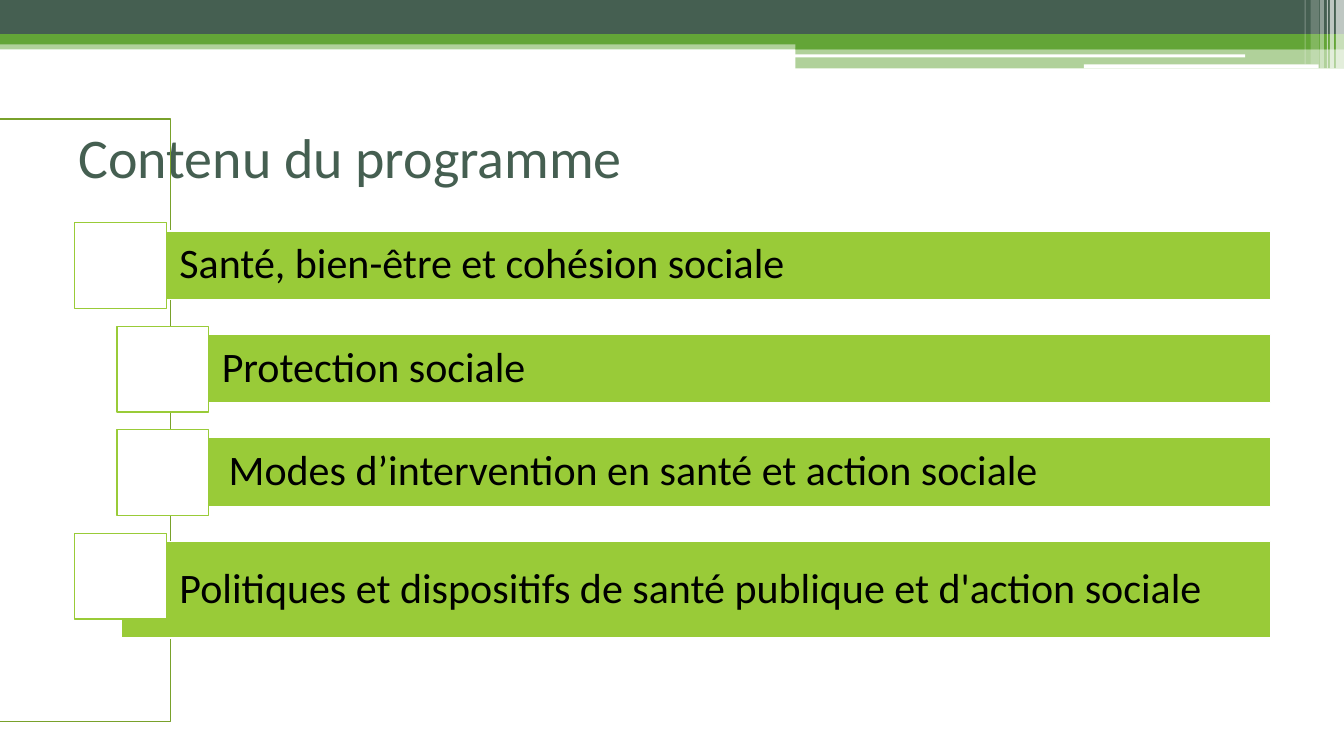
from lxml import etree
from pptx import Presentation
from pptx import util as u
from pptx.dml.color import RGBColor
from pptx.enum import shapes, text
from pptx.oxml.ns import qn

COLORS = {
    "dark": "455F51",
    "green": "63A537",
    "lime": "99CB38",
    "olive": "79A12B",
    "white": "FFFFFF",
    "black": "000000",
}


def write(tf, content, size=30, color="black", font="Calibri", spacing=None,
          anchor=text.MSO_ANCHOR.MIDDLE, insets=(0.1, 0.05, 0.1, 0.05)):
    tf.word_wrap = True
    tf.auto_size = text.MSO_AUTO_SIZE.NONE
    tf.vertical_anchor = anchor
    tf.margin_left, tf.margin_top, tf.margin_right, tf.margin_bottom = map(u.Inches, insets)
    p = tf.paragraphs[0]
    p.alignment = text.PP_ALIGN.LEFT
    if spacing:
        p.line_spacing = spacing
    r = p.add_run()
    r.text = content
    r.font.size = u.Pt(size)
    r.font.name = font
    r.font.color.rgb = RGBColor.from_string(COLORS[color])


class Deck:
    def __init__(self):
        self.prs = Presentation()
        self.prs.slide_width = u.Inches(13.33)
        self.prs.slide_height = u.Inches(7.5)
        self.s = self.prs.slides.add_slide(self.prs.slide_layouts[5])

    def title(self, content, at, **style):
        sp = self.s.shapes.title
        sp.left, sp.top, sp.width, sp.height = map(u.Inches, at)
        write(sp.text_frame, content, **style)

    def rect(self, at, fill=None, line=None, opacity=100):
        sp = self.s.shapes.add_shape(shapes.MSO_SHAPE.RECTANGLE, *map(u.Inches, at))
        sp.shadow.inherit = False
        if fill:
            sp.fill.solid()
            sp.fill.fore_color.rgb = RGBColor.from_string(COLORS[fill])
            if opacity < 100:
                color = sp.fill._xPr.find(".//" + qn("a:srgbClr"))
                etree.SubElement(color, qn("a:alpha"), val=str(opacity * 1000))
        else:
            sp.fill.background()
        if line:
            sp.line.color.rgb = RGBColor.from_string(COLORS[line])
            sp.line.width = u.Pt(1)
        else:
            sp.line.fill.background()
        return sp

    def textbox(self, content, at, **style):
        sp = self.s.shapes.add_textbox(*map(u.Inches, at))
        write(sp.text_frame, content, **style)


def main():
    deck = Deck()

    # Header bands
    for at, fill, opacity in [
        ((0, 0.4, 13.33, 0.09), "green", 50),
        ((0, 0, 13.33, 0.34), "dark", 100),
        ((0, 0.34, 13.33, 0.1), "green", 100),
        ((7.89, 0.39, 5.44, 0.1), "green", 100),
        ((7.89, 0.48, 5.44, 0.2), "green", 50),
        ((7.88, 0.54, 4.47, 0.03), "white", 100),
        ((10.75, 0.64, 2.33, 0.04), "white", 100),
    ]:
        deck.rect(at, fill, opacity=opacity)

    # Vertical stripes in the corner
    for left, width, height, opacity in [
        (13.25, 0.08, 0.68, 65),
        (13.19, 0.04, 0.68, 65),
        (13.16, 0.01, 0.68, 60),
        (13.09, 0.04, 0.68, 40),
        (13, 0.08, 0.64, 20),
        (12.94, 0.01, 0.64, 30),
    ]:
        deck.rect((left, 0, width, height), "white", opacity=opacity)

    deck.title("Contenu du programme", (0.68, 0.96, 12, 1.17), size=40, color="dark")

    # Frame behind the list
    deck.rect((-4.68, 1.18, 6.37, 5.98), line="olive")

    # Programme bars, each with a square over its left end
    first, last, right = 2.29, 5.37, 12.6
    bars = [
        (1.2, 0.68, "Santé, bien-être et cohésion sociale"),
        (1.62, 0.68, "Protection sociale"),
        (1.62, 0.68, None),
        (1.2, 0.96, "Politiques et dispositifs de santé publique et d'action sociale"),
    ]
    step = (last - first) / (len(bars) - 1)
    for i, (left, height, label) in enumerate(bars):
        top = first + i * step
        bar = deck.rect((left, top, right - left, height), "lime", "white")
        if label:
            write(bar.text_frame, label, spacing=0.9, insets=(0.58, 0.08, 0.08, 0.08))
        deck.rect((left - 0.46, top - 0.08, 0.91, 0.85), "white", "lime")

    # Label of the third bar
    deck.textbox("Modes d’intervention en santé et action sociale", (2.17, 4.41, 8.86, 0.61),
                 spacing=0.9, anchor=text.MSO_ANCHOR.TOP)

    deck.prs.save("out.pptx")


if __name__ == "__main__":
    main()
